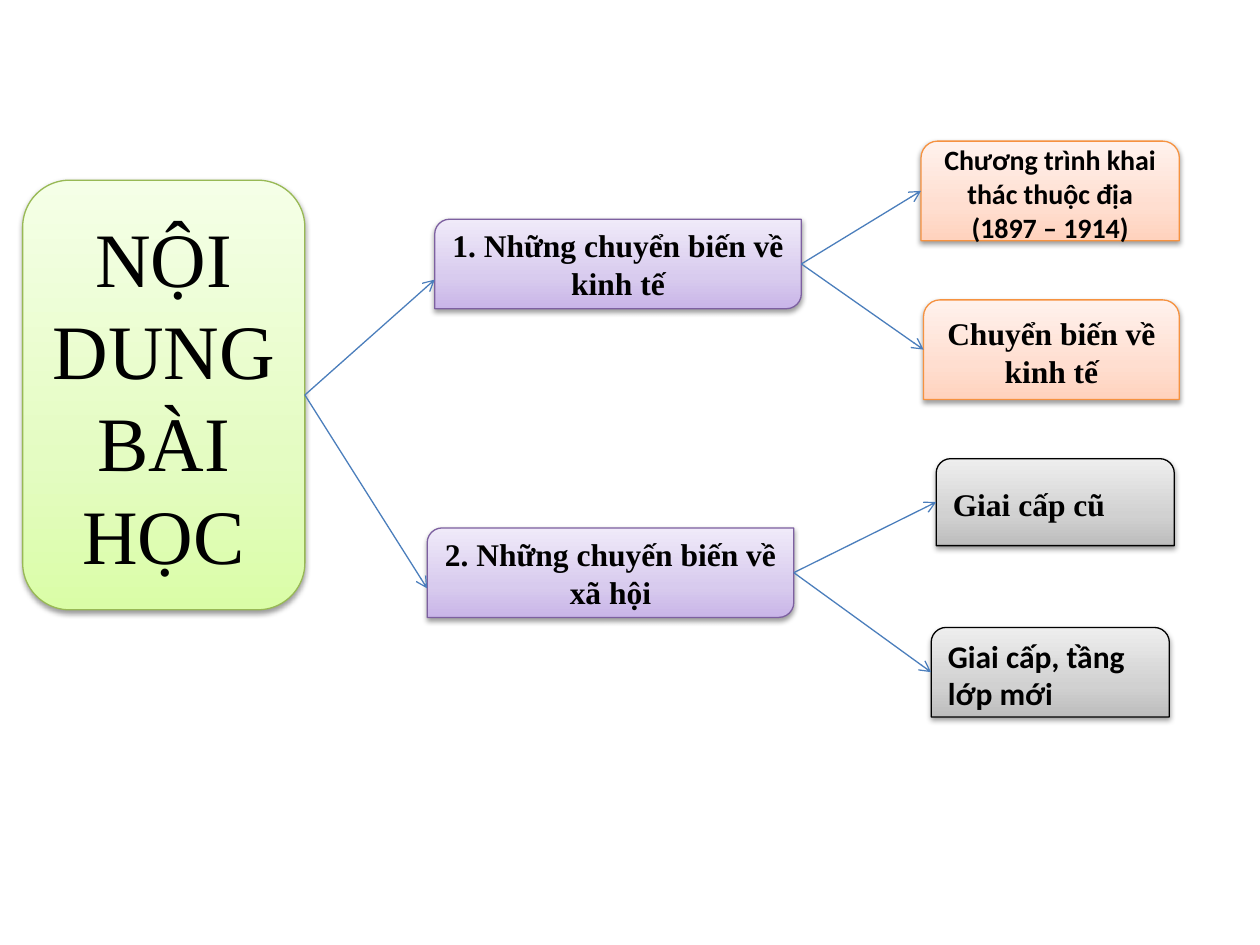
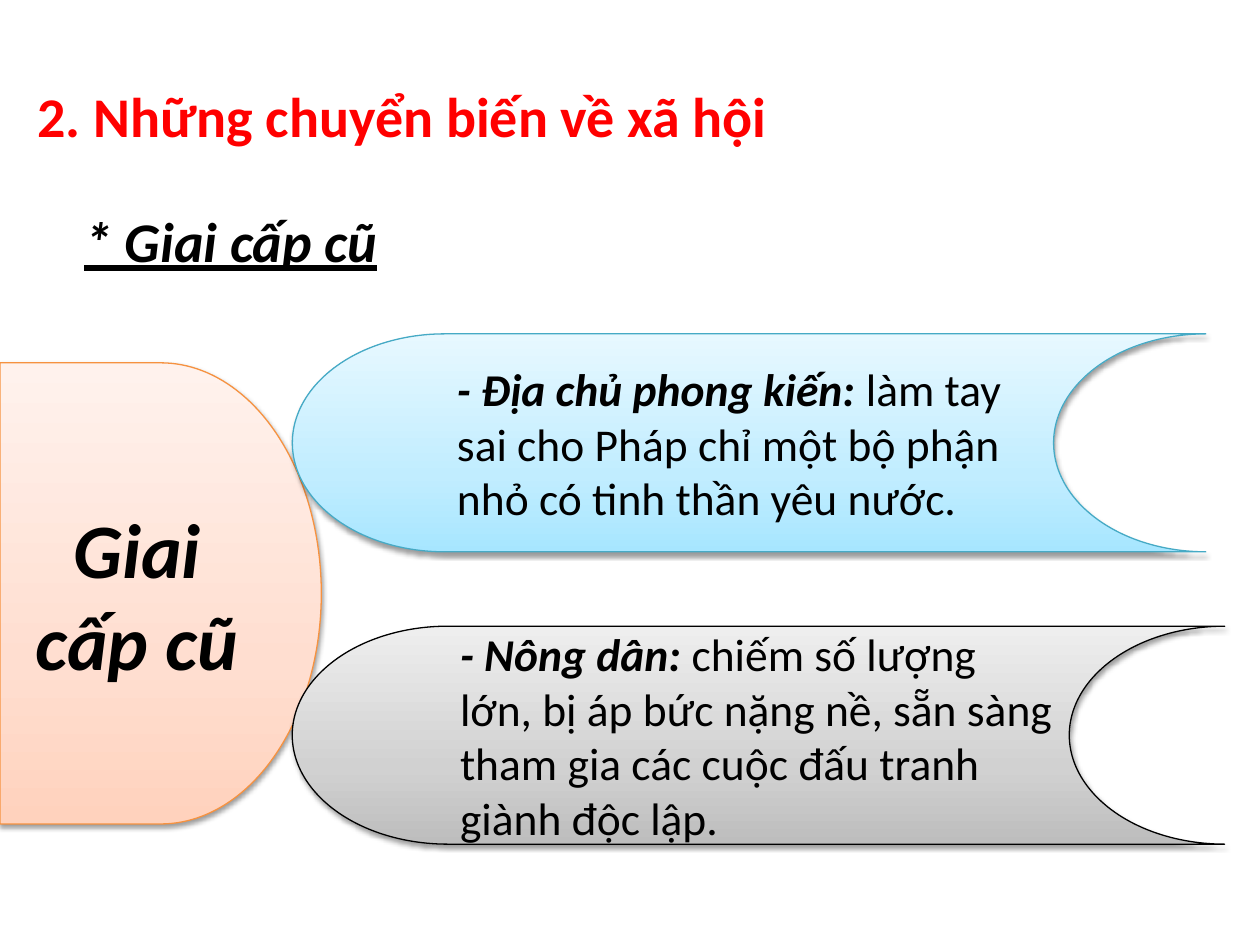
from copy import deepcopy

from lxml.etree import SubElement
from pptx import Presentation
from pptx.dml.color import RGBColor
from pptx.enum.shapes import MSO_CONNECTOR, MSO_SHAPE
from pptx.enum.text import MSO_ANCHOR, PP_ALIGN
from pptx.oxml.ns import qn
from pptx.util import Inches, Pt

BLACK = RGBColor(0x00, 0x00, 0x00)
RED = RGBColor(0xFF, 0x00, 0x00)
ARROW_BLUE = RGBColor(0x4B, 0x7E, 0xBC)


def palette(line, *stops):
    return RGBColor.from_string(line), [RGBColor.from_string(stop) for stop in stops]


GREEN = palette("98B955", "DAFDA7", "E4FCC2", "F5FFE7")
PURPLE = palette("7D60A0", "C9B5E8", "D8CBEE", "F0EAF9")
ORANGE = palette("F69240", "FFD2BD", "FFDED0", "FFF2ED")
GREY = palette("000000", "BDBDBD", "D1D1D1", "EEEEEE")
CYAN = palette("46AAC5", "A7E6FF", "C1EDFF", "E7F8FF")
STOP_POSITIONS = (0, 0.35, 1)

SERIF = "Times New Roman"
SANS = "Calibri"

ROOT_RIGHT_SITE = 3
BRANCH_RIGHT_SITE = 0
LEAF_LEFT_SITE = 2


def style_font(font, size, name=SANS, color=BLACK, bold=None, italic=None, underline=None):
    font.size = Pt(size)
    font.name = name
    font.color.rgb = color
    font.bold = bold
    font.italic = italic
    font.underline = underline


def add_gradient(shape, colors):
    shape.fill.gradient()
    shape.fill.gradient_angle = 90
    stop_list = shape._element.spPr.find(qn("a:gradFill")).find(qn("a:gsLst"))
    stop_list.append(deepcopy(stop_list[-1]))
    for stop, color, position in zip(shape.fill.gradient_stops, colors, STOP_POSITIONS):
        stop.color.rgb = color
        stop.position = position


def add_soft_shadow(shape):
    shape.shadow.inherit = False
    effects = shape._element.spPr.find(qn("a:effectLst"))
    shadow = SubElement(effects, qn("a:outerShdw"), blurRad=str(Pt(3.1)),
                        dist=str(Pt(1.6)), dir="5400000", rotWithShape="0")
    color = SubElement(shadow, qn("a:srgbClr"), val="000000")
    SubElement(color, qn("a:alpha"), val="38000")


def add_panel(slide, preset, box, colors, text, align=PP_ALIGN.CENTER, **font):
    line_color, stops = colors
    panel = slide.shapes.add_shape(preset, *map(Inches, box))
    add_gradient(panel, stops)
    panel.line.color.rgb = line_color
    panel.line.width = Pt(0.75)
    add_soft_shadow(panel)
    panel.text_frame.word_wrap = True
    panel.text_frame.vertical_anchor = MSO_ANCHOR.MIDDLE
    paragraph = panel.text_frame.paragraphs[0]
    paragraph.text = text
    paragraph.alignment = align
    style_font(paragraph.font, **font)
    return panel


def add_class_panel(slide, box, colors, class_name, description):
    panel = add_panel(slide, MSO_SHAPE.FLOWCHART_STORED_DATA, box, colors,
                      class_name, PP_ALIGN.LEFT, size=26)
    paragraph = panel.text_frame.paragraphs[0]
    name_run = paragraph.runs[0]
    name_run.font.bold = name_run.font.italic = True
    paragraph.add_run().text = description


def add_heading(slide, box, text, anchor, **font):
    heading = slide.shapes.add_textbox(*map(Inches, box))
    heading.text_frame.word_wrap = True
    heading.text_frame.vertical_anchor = anchor
    paragraph = heading.text_frame.paragraphs[0]
    paragraph.text = text
    style_font(paragraph.font, size=32, bold=True, **font)


def add_arrow(slide, source, source_site, target, target_drop, target_site=None):
    start = source.left + source.width, source.top + source.height // 2
    end = target.left, target.top + target_drop
    arrow = slide.shapes.add_connector(MSO_CONNECTOR.STRAIGHT, *start, *end)
    arrow.begin_connect(source, source_site)
    arrow.begin_x, arrow.begin_y = start
    if target_site is not None:
        arrow.end_connect(target, target_site)
        arrow.end_x, arrow.end_y = end
    arrow.line.color.rgb = ARROW_BLUE
    arrow.line.width = Pt(0.75)
    SubElement(arrow.line._get_or_add_ln(), qn("a:tailEnd"), type="arrow")
    SubElement(arrow._element.spPr, qn("a:effectLst"))


def build_outline(slide):
    root = add_panel(slide, MSO_SHAPE.ROUNDED_RECTANGLE, (0.18, 1.43, 2.24, 3.41),
                     GREEN, "NỘI DUNG BÀI HỌC", size=44, name=SERIF)
    branches = [
        ((3.45, 1.74), "1. Những chuyển biến về kinh tế", ORANGE, PP_ALIGN.CENTER, [
            ((7.31, 1.12, 2.05, 0.79), "Chương trình khai thác thuộc địa (1897 – 1914)", 16, SANS),
            ((7.33, 2.38, 2.03, 0.79), "Chuyển biến về kinh tế", 18, SERIF),
        ]),
        ((3.39, 4.19), "2. Những chuyến biến về xã hội", GREY, PP_ALIGN.LEFT, [
            ((7.43, 3.64, 1.89, 0.69), "Giai cấp cũ", 18, SERIF),
            ((7.39, 4.98, 1.89, 0.71), "Giai cấp, tầng lớp mới", 18, SANS),
        ]),
    ]
    for corner, topic, leaf_colors, leaf_align, leaves in branches:
        branch = add_panel(slide, MSO_SHAPE.ROUND_2_DIAG_RECTANGLE, (*corner, 2.91, 0.71),
                           PURPLE, topic, size=18, name=SERIF, bold=True)
        add_arrow(slide, root, ROOT_RIGHT_SITE, branch, Inches(0.48))
        for box, subtopic, size, font_name in leaves:
            leaf = add_panel(slide, MSO_SHAPE.ROUND_2_SAME_RECTANGLE, box, leaf_colors,
                             subtopic, leaf_align, size=size, name=font_name, bold=True)
            add_arrow(slide, branch, BRANCH_RIGHT_SITE, leaf, leaf.height // 2, LEAF_LEFT_SITE)


def build_old_classes(slide):
    add_heading(slide, (0.2, 0.29, 9, 1.25), "2. Những chuyển biến về xã hội",
                MSO_ANCHOR.MIDDLE, color=RED)
    add_heading(slide, (0.57, 1.59, 9, 4.95), "* Giai cấp cũ",
                MSO_ANCHOR.TOP, italic=True, underline=True)
    add_panel(slide, MSO_SHAPE.FLOWCHART_DELAY, (0, 2.88, 2.55, 3.66), ORANGE,
              "Giai cấp cũ", size=44, bold=True, italic=True)
    add_class_panel(slide, (2.32, 2.65, 7.25, 1.73), CYAN, "- Địa chủ phong kiến:",
                    " làm tay sai cho Pháp chỉ một bộ phận nhỏ có tinh thần yêu nước.")
    add_class_panel(slide, (2.32, 4.97, 7.4, 1.73), GREY, "- Nông dân:",
                    " chiếm số lượng lớn, bị áp bức nặng nề, sẵn sàng tham gia "
                    "các cuộc đấu tranh giành độc lập.")


def main():
    deck = Presentation()
    deck.slide_width = Inches(10)
    deck.slide_height = Inches(7.5)
    for build in (build_outline, build_old_classes):
        build(deck.slides.add_slide(deck.slide_layouts[6]))
    deck.save("out.pptx")


if __name__ == "__main__":
    main()
